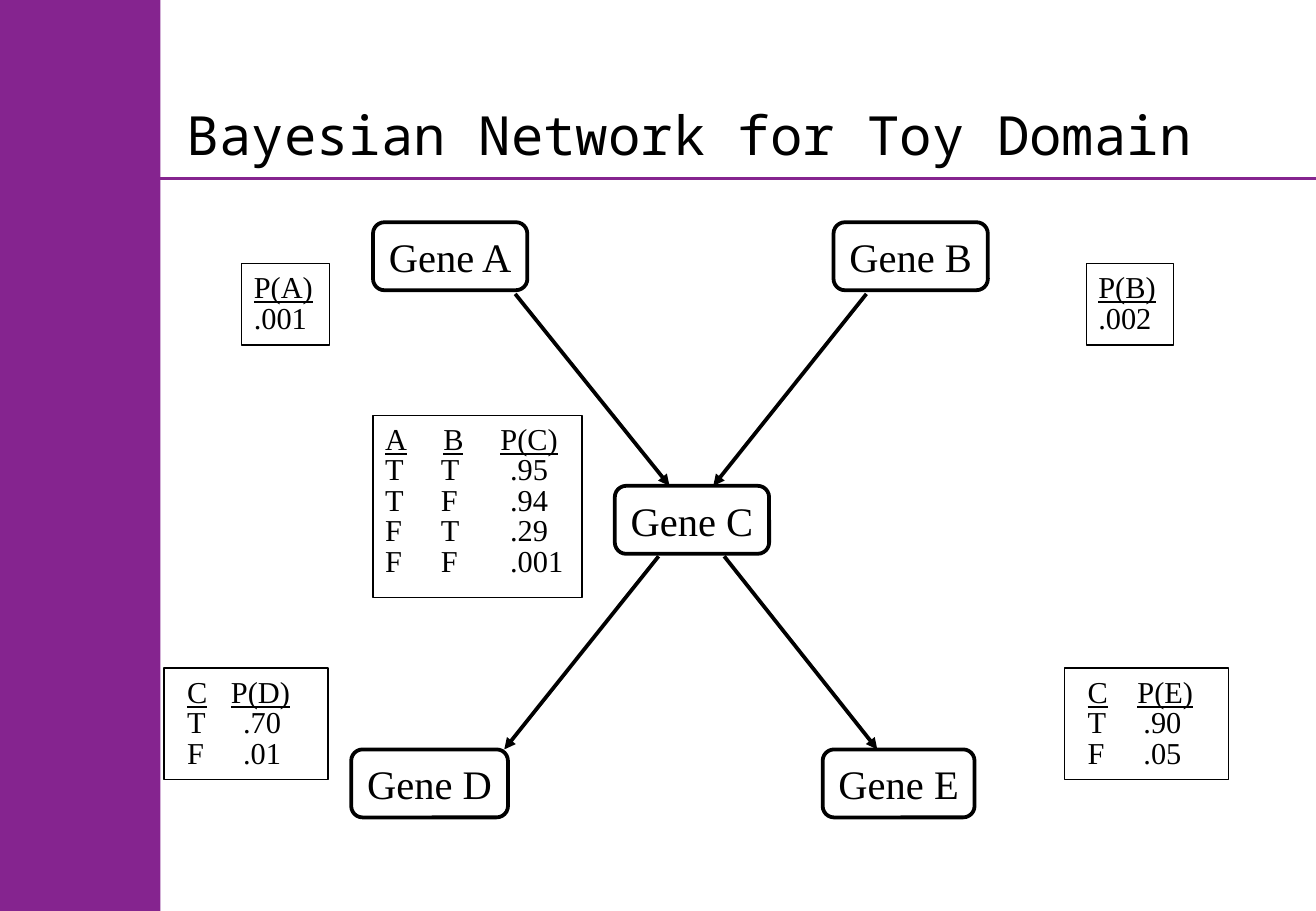
import pptx
import pptx.dml.color
import pptx.enum.shapes
import pptx.enum.text
import pptx.oxml.ns
import pptx.util
from lxml import etree

Inches = pptx.util.Inches
Pt = pptx.util.Pt
SHAPE = pptx.enum.shapes.MSO_SHAPE
ANCHOR = pptx.enum.text.MSO_ANCHOR
ALIGN = pptx.enum.text.PP_ALIGN
qn = pptx.oxml.ns.qn

PURPLE = "85248F"
BLACK = "000000"
SERIF = "Times New Roman"
MONO = "Noto Sans Mono"
SLIDE_WIDTH, SLIDE_HEIGHT = 10.83, 7.5

GENES = {
    "Gene A": (3.07, 1.83, 1.27, 0.56),
    "Gene B": (6.86, 1.83, 1.27, 0.56),
    "Gene C": (5.06, 4, 1.27, 0.56),
    "Gene D": (2.89, 6.17, 1.29, 0.56),
    "Gene E": (6.77, 6.17, 1.25, 0.56),
}
INFLUENCES = [
    ((4.24, 2.42), (5.51, 4)),
    ((7.13, 2.42), (5.87, 4)),
    ((5.42, 4.58), (4.15, 6.17)),
    ((5.96, 4.58), (7.22, 6.17)),
]
PROBABILITIES = [
    ((1.99, 2.17, 0.72, 0.67), 0.1, [], [], ["P(A)", ".001"]),
    ((8.94, 2.17, 0.72, 0.67), 0.1, [], [], ["P(B)", ".002"]),
    ((3.07, 3.42, 1.72, 1.5), 0.1, [0.48, 0.95], [0.46, 1.03],
     ["A\tB\tP(C)", "T\tT\t.95", "T\tF\t.94", "F\tT\t.29", "F\tF\t.001"]),
    ((1.35, 5.5, 1.35, 0.92), 0.19, [0.36], [0.46],
     ["C\tP(D)", "T\t.70", "F\t.01"]),
    ((8.76, 5.5, 1.35, 0.92), 0.19, [0.41], [0.46],
     ["C\tP(E)", "T\t.90", "F\t.05"]),
]


def color(hex_string):
    return pptx.dml.color.RGBColor.from_string(hex_string)


def style_runs(paragraph, font_name, size, underline=None):
    for run in paragraph.runs:
        run.font.name = font_name
        run.font.size = Pt(size)
        run.font.color.rgb = color(BLACK)
        run.font.underline = underline


def add_outline(slide, preset, box, width):
    outline = slide.shapes.add_shape(preset, *map(Inches, box))
    outline.shadow.inherit = False
    outline.fill.background()
    outline.line.color.rgb = color(BLACK)
    outline.line.width = Pt(width)
    outline.text_frame.word_wrap = False
    return outline


def add_line(slide, start, end, hex_string):
    line = slide.shapes.add_connector(
        pptx.enum.shapes.MSO_CONNECTOR.STRAIGHT, *map(Inches, start + end))
    line.line.color.rgb = color(hex_string)
    line.line.width = Pt(2.25)
    etree.SubElement(line._element.spPr, qn("a:effectLst"))
    return line


def add_frame(slide, sidebar_width, rule_top):
    add_line(slide, (sidebar_width, rule_top), (SLIDE_WIDTH, rule_top), PURPLE)
    sidebar = slide.shapes.add_shape(
        SHAPE.RECTANGLE, 0, 0, Inches(sidebar_width), Inches(SLIDE_HEIGHT))
    sidebar.shadow.inherit = False
    sidebar.fill.solid()
    sidebar.fill.fore_color.rgb = color(PURPLE)
    sidebar.line.fill.background()


def add_title(slide, box, text):
    title = slide.shapes.add_textbox(*map(Inches, box)).text_frame
    title.word_wrap = True
    title.vertical_anchor = ANCHOR.BOTTOM
    title.text = text
    style_runs(title.paragraphs[0], MONO, 32)


def add_gene(slide, box, name):
    gene = add_outline(slide, SHAPE.ROUNDED_RECTANGLE, box, 2.25)
    gene.text_frame.text = name
    gene.text_frame.vertical_anchor = ANCHOR.MIDDLE
    gene.text_frame.paragraphs[0].alignment = ALIGN.CENTER
    style_runs(gene.text_frame.paragraphs[0], SERIF, 24)


def add_influence(slide, start, end):
    influence = add_line(slide, start, end, BLACK)
    etree.SubElement(influence.line._get_or_add_ln(), qn("a:tailEnd"), type="triangle")


def add_probabilities(slide, box, inset, header_stops, row_stops, rows):
    frame = add_outline(slide, SHAPE.RECTANGLE, box, 0.75).text_frame
    frame.margin_left = Inches(inset)
    frame.margin_right = 0
    frame.margin_top = Inches(0.09)
    frame.margin_bottom = 0
    frame.vertical_anchor = ANCHOR.TOP
    frame.word_wrap = True
    frame.text = "\n".join(rows)
    for index, paragraph in enumerate(frame.paragraphs):
        paragraph.alignment = ALIGN.LEFT
        paragraph.line_spacing = Pt(18)
        stops = row_stops if index else header_stops
        if stops:
            tabs = etree.SubElement(paragraph._p.get_or_add_pPr(), qn("a:tabLst"))
            for stop in stops:
                etree.SubElement(tabs, qn("a:tab"), pos=str(Inches(stop)), algn="l")
        style_runs(paragraph, SERIF, 18, underline=index == 0)


def main():
    presentation = pptx.Presentation()
    presentation.slide_width = Inches(SLIDE_WIDTH)
    presentation.slide_height = Inches(SLIDE_HEIGHT)
    slide = presentation.slides.add_slide(presentation.slide_layouts[6])
    add_frame(slide, 1.32, 1.47)
    add_title(slide, (1.44, 0.17, 9.15, 1.25), "Bayesian Network for Toy Domain")
    for start, end in INFLUENCES:
        add_influence(slide, start, end)
    for probabilities in PROBABILITIES:
        add_probabilities(slide, *probabilities)
    for name, box in GENES.items():
        add_gene(slide, box, name)
    presentation.save("out.pptx")


if __name__ == "__main__":
    main()
